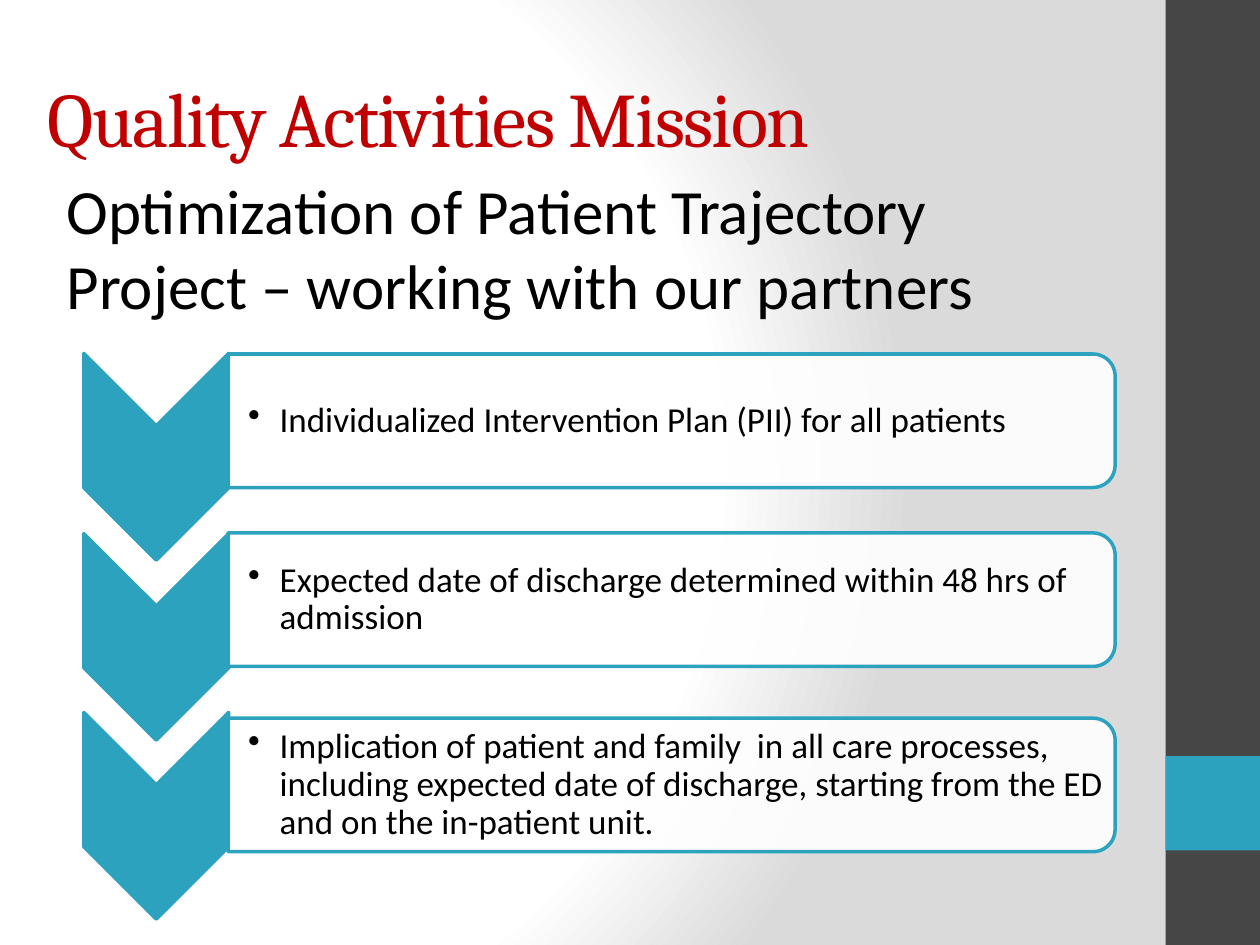
from dataclasses import dataclass

from lxml import etree
from pptx import Presentation
from pptx.dml.color import RGBColor
from pptx.enum.shapes import MSO_SHAPE
from pptx.enum.text import MSO_ANCHOR, MSO_AUTO_SIZE, PP_ALIGN
from pptx.oxml import parse_xml
from pptx.oxml.ns import nsdecls, qn
from pptx.util import Inches, Pt

RECT = MSO_SHAPE.RECTANGLE
CHEVRON = MSO_SHAPE.CHEVRON
PANEL = MSO_SHAPE.ROUND_2_SAME_RECTANGLE
MIDDLE = MSO_ANCHOR.MIDDLE
TOP = MSO_ANCHOR.TOP
LEFT = PP_ALIGN.LEFT
FIXED = MSO_AUTO_SIZE.NONE

TEAL = RGBColor(0x2D, 0xA2, 0xBF)
GREY = RGBColor(0x46, 0x46, 0x46)
WHITE = RGBColor(0xFF, 0xFF, 0xFF)
BLACK = RGBColor(0, 0, 0)
RED = RGBColor(0xC0, 0, 0)


@dataclass
class Box:
    left: float
    top: float
    width: float
    height: float

    def lengths(self) -> list:
        return [Inches(v) for v in (self.left, self.top, self.width, self.height)]


@dataclass
class Step:
    text: str
    arrow: float  # centre of the chevron
    mid: float  # centre of the panel


STEPS = [
    Step("Individualized Intervention Plan (PII) for all patients", 3.62, 3.34),
    Step("Expected date of discharge determined within 48 hrs of admission",
         5.05, 4.76),
    Step("Implication of patient and family  in all care processes, including "
         "expected date of discharge, starting from the ED and on the "
         "in-patient unit.", 6.47, 6.23),
]


def set_back(slide) -> None:
    """Radial white to grey background."""
    stops = "".join(
        f'<a:gs pos="{pos}000"><a:srgbClr val="{color}"/></a:gs>'
        for pos, color in ((0, "FFFFFF"), (75, "FFFFFF"), (100, "DADADA")))
    back = parse_xml(
        f'<p:bg {nsdecls("p", "a")}><p:bgPr><a:gradFill rotWithShape="1">'
        f'<a:gsLst>{stops}</a:gsLst><a:path path="circle">'
        '<a:fillToRect l="20000" t="50000" r="100000" b="50000"/></a:path>'
        '</a:gradFill><a:effectLst/></p:bgPr></p:bg>')
    slide.element.cSld.insert(0, back)


def add_shape(slide, kind, box: Box, fill: RGBColor, line: RGBColor = None,
              turn: int = 0, alpha: int = 100) -> None:
    shape = slide.shapes.add_shape(kind, *box.lengths())
    shape.shadow.inherit = False
    shape.rotation = turn
    shape.fill.solid()
    shape.fill.fore_color.rgb = fill
    if alpha < 100:
        color = shape.fill._xPr.find(qn("a:solidFill"))[0]
        etree.SubElement(color, qn("a:alpha"), val=str(alpha * 1000))
    if line is None:
        shape.line.fill.background()
    else:
        shape.line.color.rgb = line
        shape.line.width = Pt(2)


def put_text(shape, text: str, *, size: int, font: str = "Calibri",
             color: RGBColor = BLACK, anchor=TOP, inset: tuple = None,
             bullet: bool = False, track: int = 0) -> None:
    frame = shape.text_frame
    frame.word_wrap = True
    frame.auto_size = FIXED
    frame.vertical_anchor = anchor
    if inset:
        (frame.margin_left, frame.margin_top, frame.margin_right,
         frame.margin_bottom) = [Inches(v) for v in inset]
    para = frame.paragraphs[0]
    para.alignment = LEFT
    run = para.add_run()
    run.text = text
    run.font.size = Pt(size)
    run.font.name = font
    run.font.color.rgb = color
    if track:
        run.font._element.set("spc", str(track * 100))
    if bullet:
        para.line_spacing = 0.9
        props = para._p.get_or_add_pPr()
        props.set("marL", str(Inches(0.25)))
        props.set("indent", str(-Inches(0.25)))
        etree.SubElement(props, qn("a:buChar"), char="•")


def add_step(slide, step: Step) -> None:
    add_shape(slide, CHEVRON, Box(0.42, step.arrow - 0.57, 1.64, 1.15),
              TEAL, TEAL, turn=90)
    add_shape(slide, PANEL, Box(4.8, step.mid - 3.52, 1.06, 7.04),
              WHITE, TEAL, turn=90, alpha=90)
    label = slide.shapes.add_textbox(
        *Box(1.81, step.mid - 0.48, 6.99, 0.96).lengths())
    put_text(label, step.text, size=20, anchor=MIDDLE, bullet=True,
             inset=(0.16, 0.01, 0.01, 0.01))


def main() -> None:
    deck = Presentation()
    deck.slide_width, deck.slide_height = Inches(10), Inches(7.5)
    slide = deck.slides.add_slide(deck.slide_layouts[5])
    set_back(slide)

    # Side band
    add_shape(slide, RECT, Box(9.25, 0, 0.75, 7.5), GREY)
    add_shape(slide, RECT, Box(9.25, 6, 0.75, 0.75), TEAL)

    # Title
    title = slide.shapes.title
    title.left, title.top, title.width, title.height = Box(
        0.28, 0.3, 8.98, 1.25).lengths()
    put_text(title, "Quality Activities Mission", size=44, font="Cambria",
             color=RED, anchor=MIDDLE, track=-1)

    # Steps
    for step in STEPS:
        add_step(slide, step)

    # Subtitle
    intro = slide.shapes.add_textbox(*Box(0.43, 1.31, 8.27, 1.31).lengths())
    put_text(intro, "Optimization of Patient Trajectory Project – working "
             "with our partners", size=36)

    deck.save("out.pptx")


if __name__ == "__main__":
    main()
